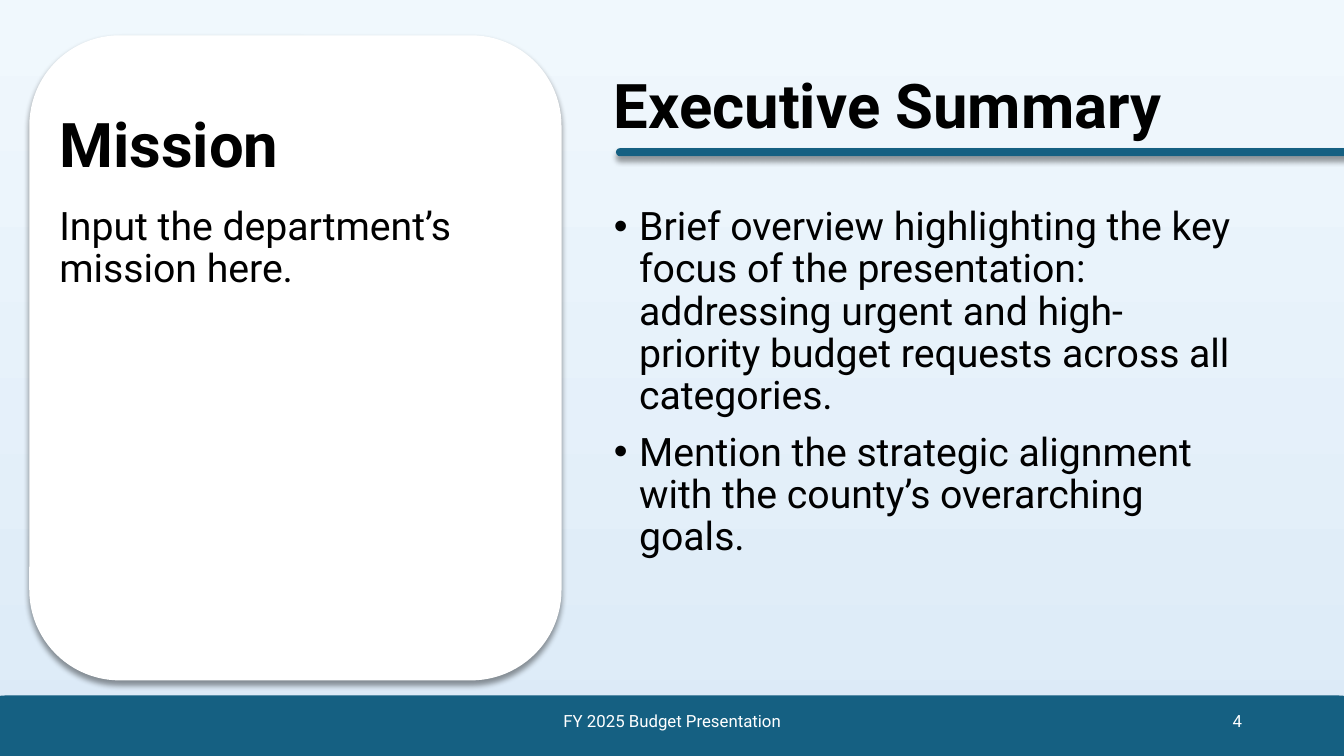
import dataclasses

import lxml.etree
import pptx
import pptx.dml.color
import pptx.enum.shapes
import pptx.enum.text
import pptx.oxml
import pptx.oxml.ns
import pptx.util

ALIGN = pptx.enum.text.PP_ALIGN
ANCHOR = pptx.enum.text.MSO_ANCHOR
FONT = "Roboto"
BLUE, WHITE, BLACK = "156082", "FFFFFF", "000000"
SLIDE_WIDTH = pptx.util.Inches(13.333)
SLIDE_HEIGHT = pptx.util.Inches(7.5)
COLUMN = SLIDE_WIDTH / 100
ROW = SLIDE_HEIGHT / 100

RIGHT_COLUMN, CARD_TEXT_COLUMN = 44.93, 3.68
BODY_ROW, BODY_ROWS = 26.67, 63.47
HEADING_ROWS = 19.33
FOOTER_ROW, FOOTER_ROWS = 92.67, 5.33


@dataclasses.dataclass
class Area:
    column: float
    row: float
    columns: float
    rows: float


@dataclasses.dataclass
class Panel:
    area: Area
    fill: str
    rounding: float


@dataclasses.dataclass
class Style:
    size: int
    color: str = BLACK
    bold: bool = False
    align: ALIGN = ALIGN.LEFT
    anchor: ANCHOR = ANCHOR.MIDDLE
    line_spacing: float = 1.0
    space_before: int = 0
    bullet: bool = False


@dataclasses.dataclass
class Label:
    text: str
    area: Area
    style: Style


HEADING = Style(44, bold=True, line_spacing=0.9)
BODY = Style(28, anchor=ANCHOR.TOP, line_spacing=0.9, space_before=10)
BULLETS = dataclasses.replace(BODY, bullet=True)
FOOTER = Style(12, WHITE, align=ALIGN.CENTER)
NUMBER = dataclasses.replace(FOOTER, align=ALIGN.RIGHT)

PANELS = [
    Panel(Area(-2.78, 92, 105.55, 11.2), BLUE, 0.5),
    Panel(Area(2.18, 4.67, 39.6, 85.33), WHITE, 0.17),
    Panel(Area(45.83, 19.6, 67.58, 1.07), BLUE, 0.5),
]

TITLE = Label("Executive Summary", Area(RIGHT_COLUMN, 4.67, 51.38, HEADING_ROWS), HEADING)
SUMMARY = Label(
    "Brief overview highlighting the key focus of the presentation: addressing urgent "
    "and high-priority budget requests across all categories.\n"
    "Mention the strategic alignment with the county’s overarching goals.",
    Area(RIGHT_COLUMN, BODY_ROW, 48.15, BODY_ROWS),
    BULLETS,
)
LABELS = [
    Label("Mission", Area(CARD_TEXT_COLUMN, 9.87, 20.18, HEADING_ROWS), HEADING),
    Label(
        "Input the department’s mission here.",
        Area(CARD_TEXT_COLUMN, BODY_ROW, 36.6, BODY_ROWS),
        BODY,
    ),
    Label("FY 2025 Budget Presentation", Area(33.15, FOOTER_ROW, 33.75, FOOTER_ROWS), FOOTER),
    Label("4", Area(70.65, FOOTER_ROW, 22.5, FOOTER_ROWS), NUMBER),
]


def rgb(value: str) -> pptx.dml.color.RGBColor:
    return pptx.dml.color.RGBColor.from_string(value)


def frame(area: Area) -> tuple[int, int, int, int]:
    return (
        round(area.column * COLUMN),
        round(area.row * ROW),
        round(area.columns * COLUMN),
        round(area.rows * ROW),
    )


def paint_background(page) -> None:
    fill = page.background.fill
    fill.gradient()
    fill.gradient_angle = 270
    for stop, position, color in zip(fill.gradient_stops, (0, 1), ("F0F8FD", "DCEAF7")):
        stop.position = position
        stop.color.rgb = rgb(color)


def add_shadow(shape) -> None:
    shape.shadow.inherit = False
    effects = shape._element.spPr.find(pptx.oxml.ns.qn("a:effectLst"))
    effects.append(
        pptx.oxml.parse_xml(
            f'<a:outerShdw {pptx.oxml.ns.nsdecls("a")} blurRad="{pptx.util.Pt(4)}" '
            f'dist="{pptx.util.Pt(3)}" dir="5400000" algn="t" rotWithShape="0">'
            f'<a:srgbClr val="{BLACK}"><a:alpha val="40000"/></a:srgbClr></a:outerShdw>'
        )
    )


def draw_panel(page, panel: Panel) -> None:
    rounded = pptx.enum.shapes.MSO_SHAPE.ROUNDED_RECTANGLE
    shape = page.shapes.add_shape(rounded, *frame(panel.area))
    shape.adjustments[0] = panel.rounding
    shape.fill.solid()
    shape.fill.fore_color.rgb = rgb(panel.fill)
    shape.line.fill.background()
    add_shadow(shape)


def add_bullet(para) -> None:
    properties = para._p.get_or_add_pPr()
    indent = pptx.util.Inches(0.25)
    properties.set("marL", str(indent))
    properties.set("indent", str(-indent))
    font = lxml.etree.SubElement(properties, pptx.oxml.ns.qn("a:buFont"))
    font.set("typeface", "Arial")
    mark = lxml.etree.SubElement(properties, pptx.oxml.ns.qn("a:buChar"))
    mark.set("char", "•")


def write_label(box, label: Label) -> None:
    style = label.style
    box.left, box.top, box.width, box.height = frame(label.area)
    text_frame = box.text_frame
    text_frame.text = label.text
    text_frame.word_wrap = True
    text_frame.auto_size = pptx.enum.text.MSO_AUTO_SIZE.NONE
    text_frame.vertical_anchor = style.anchor
    for para in text_frame.paragraphs:
        para.alignment = style.align
        para.line_spacing = style.line_spacing
        para.space_before = pptx.util.Pt(style.space_before)
        if style.bullet:
            add_bullet(para)
        for span in para.runs:
            span.font.name = FONT
            span.font.size = pptx.util.Pt(style.size)
            span.font.bold = style.bold
            span.font.color.rgb = rgb(style.color)


def main() -> None:
    deck = pptx.Presentation()
    deck.slide_width = SLIDE_WIDTH
    deck.slide_height = SLIDE_HEIGHT
    page = deck.slides.add_slide(deck.slide_layouts.get_by_name("Title and Content"))
    paint_background(page)
    write_label(page.shapes.title, TITLE)
    write_label(page.placeholders[1], SUMMARY)
    for panel in PANELS:
        draw_panel(page, panel)
    for label in LABELS:
        write_label(page.shapes.add_textbox(*frame(label.area)), label)
    deck.save("out.pptx")


if __name__ == "__main__":
    main()
